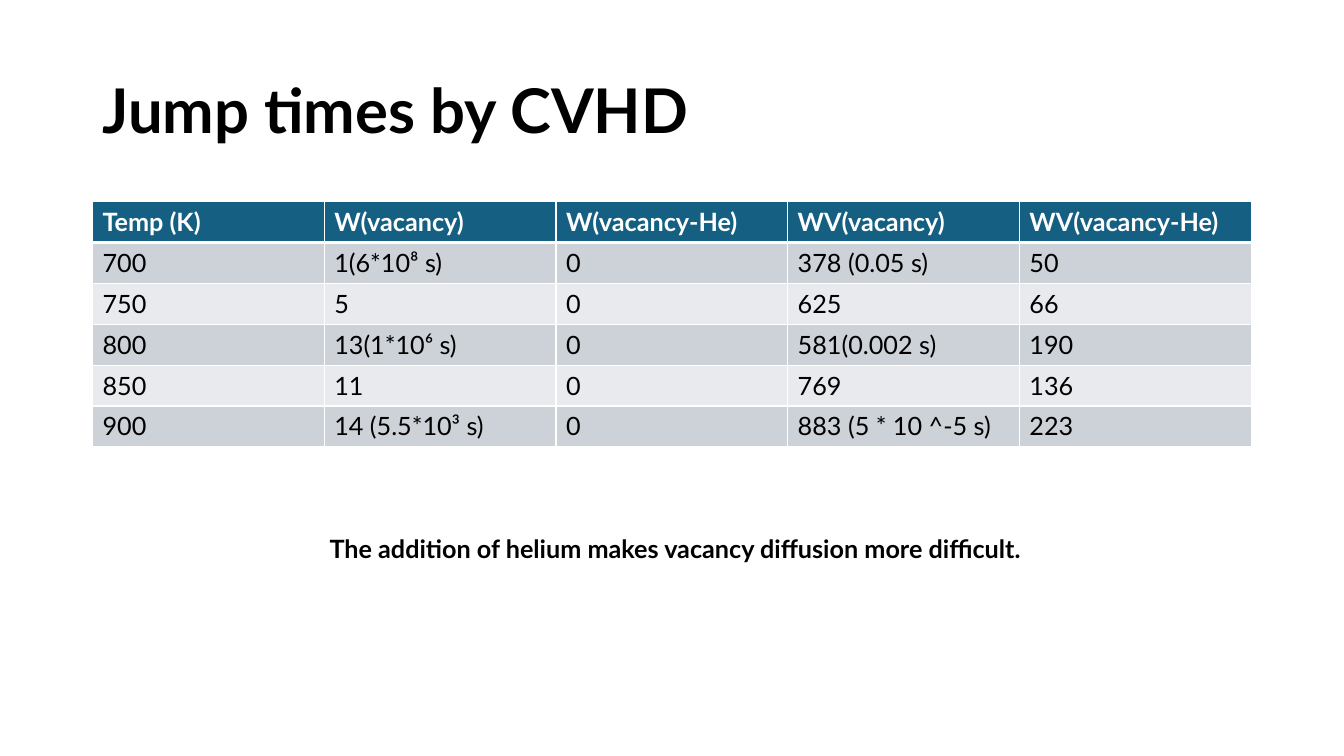
from dataclasses import dataclass

from lxml import etree
from pptx import Presentation
from pptx import util as u
from pptx.dml.color import RGBColor
from pptx.enum import text
from pptx.oxml import ns

FONT = "Lato"
HUES = {
    "ink": "000000",
    "paper": "FFFFFF",
    "head": "156082",
    "odd": "CCD2D8",
    "even": "E8EAED",
}


@dataclass(frozen=True)
class Look:
    size: int
    hue: str = "ink"
    bold: bool = True


@dataclass(frozen=True)
class Band:
    """One table row: its texts, fill, text look and lower border in points."""
    texts: tuple[str, ...]
    fill: str
    look: Look
    base: int = 1


HEAD = ("Temp (K)", "W(vacancy)", "W(vacancy-He)", "WV(vacancy)", "WV(vacancy-He)")
JUMPS = (
    ("700", "1(6*10⁸ s)", "0", "378 (0.05 s)", "50"),
    ("750", "5", "0", "625", "66"),
    ("800", "13(1*10⁶ s)", "0", "581(0.002 s)", "190"),
    ("850", "11", "0", "769", "136"),
    ("900", "14 (5.5*10³ s)", "0", "883 (5 * 10 ^-5 s)", "223"),
)
COL, ROW = u.Cm(5.84), u.Cm(1.03)


def write(frame, words: str, look: Look, align=text.PP_ALIGN.LEFT) -> None:
    frame.text = words
    para = frame.paragraphs[0]
    para.alignment = align
    font = para.runs[0].font
    font.name, font.size, font.bold = FONT, u.Pt(look.size), look.bold
    font.color.rgb = RGBColor.from_string(HUES[look.hue])


def edge(cell, side: str, width: int) -> None:
    props = cell._tc.get_or_add_tcPr()
    line = etree.SubElement(props, ns.qn(f"a:ln{side}"), w=str(u.Pt(width)))
    fill = etree.SubElement(line, ns.qn("a:solidFill"))
    etree.SubElement(fill, ns.qn("a:srgbClr"), val=HUES["paper"])


def draw_band(row, band: Band, top: int) -> None:
    row.height = ROW
    for cell, words in zip(row.cells, band.texts):
        write(cell.text_frame, words, band.look)
        for side, width in zip("LRTB", (1, 1, top, band.base)):
            edge(cell, side, width)
        cell.fill.solid()
        cell.fill.fore_color.rgb = RGBColor.from_string(HUES[band.fill])


def draw_table(slide, bands: list[Band]) -> None:
    cols = len(HEAD)
    frame = slide.shapes.add_table(
        len(bands), cols, u.Cm(2.33), u.Cm(5.08), COL * cols, ROW * len(bands)
    )
    for col in frame.table.columns:
        col.width = COL
    top = 1
    for row, band in zip(frame.table.rows, bands):
        draw_band(row, band, top)
        top = band.base


def draw_title(slide) -> None:
    title = slide.shapes.title
    title.left, title.top = u.Cm(2.33), u.Cm(1.01)
    title.width, title.height = u.Cm(29.21), u.Cm(3.68)
    frame = title.text_frame
    frame.auto_size = text.MSO_AUTO_SIZE.NONE
    frame.vertical_anchor = text.MSO_ANCHOR.MIDDLE
    write(frame, "Jump times by CVHD", Look(44))
    frame.paragraphs[0].line_spacing = 0.9


def draw_note(slide) -> None:
    box = slide.shapes.add_textbox(u.Cm(1.98), u.Cm(13.31), u.Cm(30.07), u.Cm(1.03))
    frame = box.text_frame
    frame.word_wrap = True
    frame.auto_size = text.MSO_AUTO_SIZE.SHAPE_TO_FIT_TEXT
    words = "The addition of helium makes vacancy diffusion more difficult."
    write(frame, words, Look(18), text.PP_ALIGN.CENTER)


def main() -> None:
    deck = Presentation()
    deck.slide_width, deck.slide_height = u.Cm(33.87), u.Cm(19.05)
    slide = deck.slides.add_slide(deck.slide_layouts.get_by_name("Title Only"))
    draw_title(slide)
    bands = [Band(HEAD, "head", Look(18, "paper"), base=3)]
    for i, texts in enumerate(JUMPS):
        bands.append(Band(texts, "even" if i % 2 else "odd", Look(18, bold=False)))
    draw_table(slide, bands)
    draw_note(slide)
    deck.save("out.pptx")


if __name__ == "__main__":
    main()
